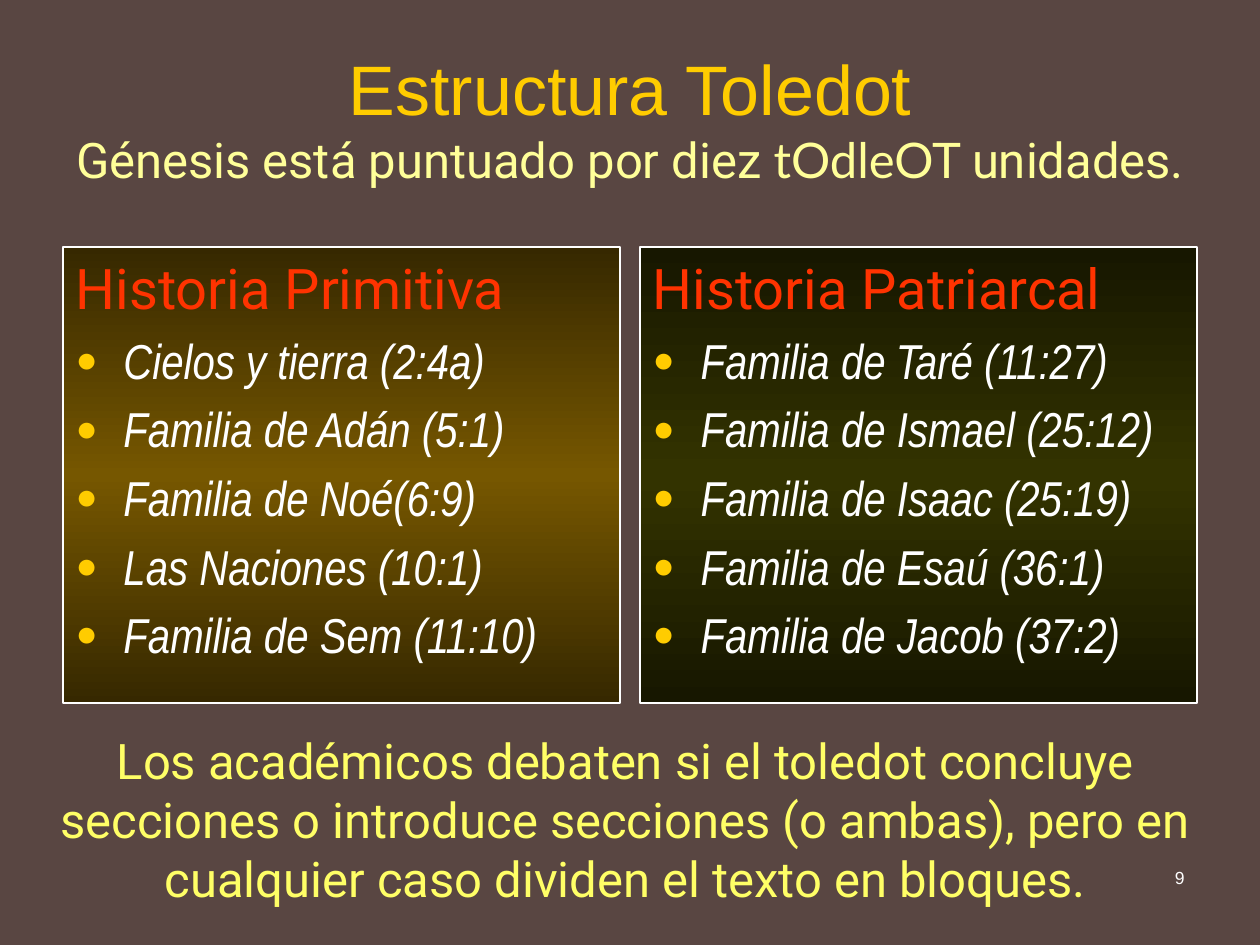
from lxml.etree import SubElement
from pptx import Presentation
from pptx.dml.color import RGBColor
from pptx.enum.text import MSO_ANCHOR, MSO_AUTO_SIZE, PP_ALIGN
from pptx.oxml.ns import qn
from pptx.util import Inches, Pt

COLORS = {
    "background": "594642",
    "title": "FFCC00",
    "subtitle": "FFFF99",
    "heading": "FF3300",
    "bullet": "FFCC00",
    "white": "FFFFFF",
    "conclusion": "FFFF66",
    "gold_edge": "362800",
    "gold_middle": "765700",
    "olive_edge": "171700",
    "olive_middle": "333300",
}
PRIMEVAL = ["Cielos y tierra (2:4a)", "Familia de Adán (5:1)", "Familia de Noé(6:9)",
            "Las Naciones (10:1)", "Familia de Sem (11:10)"]
PATRIARCHAL = ["Familia de Taré (11:27)", "Familia de Ismael (25:12)",
               "Familia de Isaac (25:19)", "Familia de Esaú (36:1)",
               "Familia de Jacob (37:2)"]


def rgb(name):
    """Return the named colour."""
    return RGBColor.from_string(COLORS[name])


def format_run(run, font, size, color, italic=False):
    """Set the font of a run."""
    run.font.name = font
    run.font.size = Pt(size)
    run.font.color.rgb = rgb(color)
    run.font.italic = italic


def place(shape, box):
    """Move a shape to a box of left, top, width and height in inches."""
    shape.left, shape.top, shape.width, shape.height = map(Inches, box)


def add_title(slide, box):
    """Fill the title placeholder with a title and a subtitle."""
    title = slide.shapes.title
    place(title, box)
    frame = title.text_frame
    frame.auto_size = MSO_AUTO_SIZE.NONE
    frame.vertical_anchor = MSO_ANCHOR.MIDDLE
    frame.text = "Estructura Toledot\v"
    paragraph = frame.paragraphs[0]
    paragraph.alignment = PP_ALIGN.CENTER
    format_run(paragraph.runs[0], "Arial", 40, "title")
    line_break = paragraph._p.find(qn("a:br"))
    SubElement(line_break, qn("a:rPr"), sz="4000")
    for text, font in (("Génesis está puntuado por diez ", "Roboto"),
                       ("tOdleOT ", "Lato"), ("unidades.", "Roboto")):
        run = paragraph.add_run()
        run.text = text
        format_run(run, font, 28, "subtitle")


def set_bullet(paragraph, visible):
    """Give a paragraph a hanging indent, with or without a round bullet."""
    properties = paragraph._p.get_or_add_pPr()
    properties.set("marL", str(Inches(0.38)))
    properties.set("indent", str(-Inches(0.38)))
    if not visible:
        SubElement(properties, qn("a:buNone"))
        return
    color = SubElement(properties, qn("a:buClr"))
    SubElement(color, qn("a:srgbClr"), val=COLORS["bullet"])
    SubElement(properties, qn("a:buSzPct"), val="75000")
    SubElement(properties, qn("a:buFont"), typeface="Arial")
    SubElement(properties, qn("a:buChar"), char="●")


def fill_gradient(shape, edge, middle):
    """Fill a shape with a vertical gradient that is brightest halfway."""
    properties = shape._element.spPr
    gradient = SubElement(properties, qn("a:gradFill"), rotWithShape="1")
    stops = SubElement(gradient, qn("a:gsLst"))
    for position, name in ((0, edge), (50000, middle), (100000, edge)):
        stop = SubElement(stops, qn("a:gs"), pos=str(position))
        SubElement(stop, qn("a:srgbClr"), val=COLORS[name])
    SubElement(gradient, qn("a:lin"), ang="5400000", scaled="1")


def add_panel(panel, box, heading, items, tone):
    """Fill a body placeholder with a heading and a bulleted list."""
    place(panel, box)
    fill_gradient(panel, f"{tone}_edge", f"{tone}_middle")
    panel.line.color.rgb = rgb("white")
    panel.line.width = Pt(0.75)
    frame = panel.text_frame
    frame.auto_size = MSO_AUTO_SIZE.NONE
    frame.text = "\n".join([heading, *items])
    for index, paragraph in enumerate(frame.paragraphs):
        set_bullet(paragraph, index > 0)
        if index:
            format_run(paragraph.runs[0], "Arial Narrow", 28, "white", True)
        else:
            format_run(paragraph.runs[0], "Roboto", 32, "heading")


def add_text(slide, box, text, font, size, color, alignment):
    """Add a wrapped text box of one paragraph."""
    text_box = slide.shapes.add_textbox(*map(Inches, box))
    frame = text_box.text_frame
    frame.word_wrap = True
    frame.text = text
    frame.paragraphs[0].alignment = alignment
    format_run(frame.paragraphs[0].runs[0], font, size, color)


def main():
    """Build and save the slide."""
    presentation = Presentation()
    presentation.slide_width = Inches(10)
    presentation.slide_height = Inches(7.5)
    slide = presentation.slides.add_slide(presentation.slide_layouts[3])
    slide.background.fill.solid()
    slide.background.fill.fore_color.rgb = rgb("background")

    add_title(slide, (0.5, 0.3, 9, 1.25))
    panels = (("Historia Primitiva", PRIMEVAL, "gold"),
              ("Historia Patriarcal", PATRIARCHAL, "olive"))
    width, gap = 4.42, 0.16
    for index, panel in enumerate(panels):
        box = (0.5 + index * (width + gap), 1.96, width, 3.62)
        add_panel(slide.placeholders[index + 1], box, *panel)
    add_text(slide, (0.25, 5.75, 9.42, 1.51),
             "Los académicos debaten si el toledot concluye secciones o introduce "
             "secciones (o ambas), pero en cualquier caso dividen el texto en bloques.",
             "Roboto", 28, "conclusion", PP_ALIGN.CENTER)
    add_text(slide, (7.17, 6.83, 2.33, 0.5), "9", "Arial", 10, "white", PP_ALIGN.RIGHT)
    presentation.save("out.pptx")


if __name__ == "__main__":
    main()
